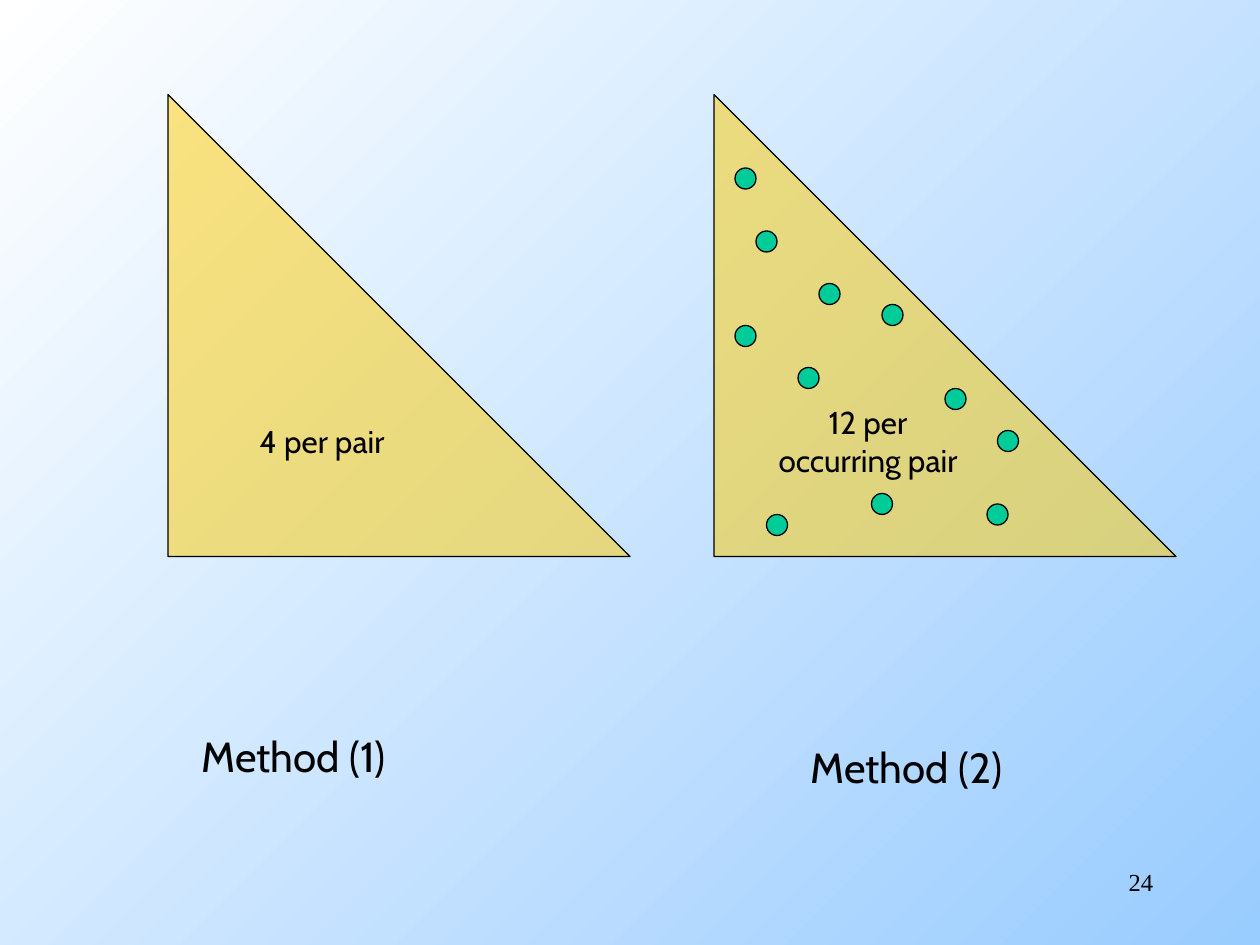
from lxml import etree
from pptx import Presentation
from pptx.dml.color import RGBColor
from pptx.enum.shapes import MSO_SHAPE
from pptx.enum.text import MSO_ANCHOR, MSO_AUTO_SIZE, PP_ALIGN
from pptx.oxml.ns import qn
from pptx.util import Cm, Pt

TRIANGLE = MSO_SHAPE.RIGHT_TRIANGLE
OVAL = MSO_SHAPE.OVAL
TOP = MSO_ANCHOR.TOP
MIDDLE = MSO_ANCHOR.MIDDLE
FIT_SHAPE = MSO_AUTO_SIZE.SHAPE_TO_FIT_TEXT
LEFT = PP_ALIGN.LEFT
CENTER = PP_ALIGN.CENTER
RIGHT = PP_ALIGN.RIGHT

GRID = Cm(2.54) // 12
TRIANGLE_SIDE = 44
DOT_SIZE = 2
PAIR_DOTS = [(2, 7), (4, 13), (10, 18), (16, 20), (2, 22), (8, 26),
             (22, 28), (27, 32), (15, 38), (26, 39), (5, 40)]


def color(hex_code):
    return RGBColor.from_string(hex_code)


def on_grid(*lengths):
    return [GRID * length for length in lengths]


def write(shape, text, size=18, font="Cabin", align=LEFT, anchor=TOP, wrap=False):
    frame = shape.text_frame
    frame.word_wrap = wrap
    frame.vertical_anchor = anchor
    for index, line in enumerate(text.split("\n")):
        para = frame.add_paragraph() if index else frame.paragraphs[0]
        para.alignment = align
        span = para.add_run()
        span.text = line
        span.font.size = Pt(size)
        span.font.name = font
        span.font.color.rgb = color("000000")


def add_outlined(page, kind, box, fill, opacity=100):
    shape = page.shapes.add_shape(kind, *on_grid(*box))
    shape.shadow.inherit = False
    shape.fill.solid()
    shape.fill.fore_color.rgb = color(fill)
    shape.line.color.rgb = color("000000")
    shape.line.width = Pt(0.75)
    if opacity < 100:
        tone = shape.fill._xPr.find(qn("a:solidFill"))[0]
        etree.SubElement(tone, qn("a:alpha")).set("val", str(opacity * 1000))
    return shape


def add_background(page):
    fill = page.background.fill
    fill.gradient()
    fill.gradient_angle = 315
    for stop, tone in zip(fill.gradient_stops, ("FFFFFF", "99CCFF")):
        stop.color.rgb = color(tone)


def add_pair_triangle(page, left, top, text, dots=()):
    box = (left, top, TRIANGLE_SIDE, TRIANGLE_SIDE)
    triangle = add_outlined(page, TRIANGLE, box, "FFCC00", opacity=50)
    write(triangle, text, align=CENTER, anchor=MIDDLE)
    for across, down in dots:
        add_outlined(page, OVAL, (left + across, top + down, DOT_SIZE, DOT_SIZE), "00CC99")


def add_method_label(page, left, top, text):
    label = page.shapes.add_textbox(*on_grid(left, top, 22, 6))
    write(label, text, size=24)
    label.text_frame.auto_size = FIT_SHAPE


def add_page_number(page, left, top, text):
    number = page.shapes.add_textbox(*on_grid(left, top, 25, 6))
    write(number, text, size=14, font="Times New Roman", align=RIGHT, wrap=True)


def main():
    deck = Presentation()
    deck.slide_width, deck.slide_height = Cm(25.4), Cm(19.05)
    page = deck.slides.add_slide(deck.slide_layouts[6])
    add_background(page)
    add_page_number(page, 86, 82, "24")
    add_pair_triangle(page, 16, 9, "4 per pair")
    add_method_label(page, 18, 69, "Method (1)")
    add_method_label(page, 76, 70, "Method (2)")
    add_pair_triangle(page, 68, 9, "12 per\noccurring pair", PAIR_DOTS)
    deck.save("out.pptx")


if __name__ == "__main__":
    main()
